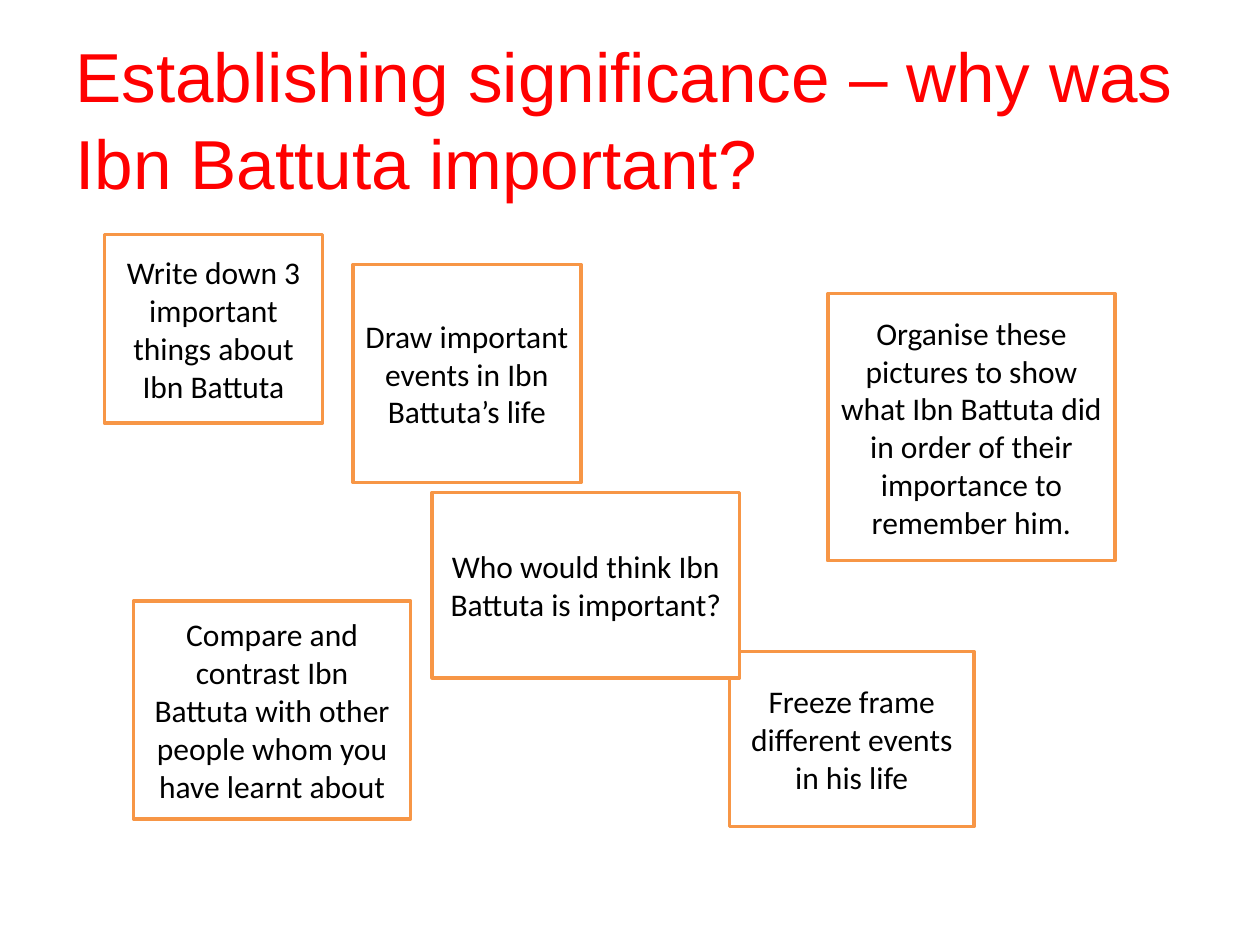
from pptx import Presentation, util as u
from pptx.dml.color import RGBColor
from pptx.enum import shapes, text

COLUMNS, ROWS = 100, 75
TASKS = [
    ("Write down 3 important things about Ibn Battuta", (8.3, 18.6, 17.3, 15)),
    ("Draw important events in Ibn Battuta’s life", (28, 21, 18.1, 17.3)),
    ("Organise these pictures to show what Ibn Battuta did in order of "
     "their importance to remember him.", (65.7, 23.3, 22.8, 21.2)),
    ("Freeze frame different events in his life", (57.9, 51.7, 19.4, 13.9)),
    ("Who would think Ibn Battuta is important?", (34.3, 39.1, 24.4, 14.7)),
    ("Compare and contrast Ibn Battuta with other people whom you have "
     "learnt about", (10.6, 47.7, 22, 17.3)),
]


def colour(value):
    """Turn a hex string into a colour."""
    return RGBColor.from_string(value)


def assign(target, values):
    """Set each named attribute on the target."""
    for name, value in values.items():
        setattr(target, name, value)


class Board:
    """Hold the style and the current slide."""

    title_style = {"font": {"name": "Arial", "size": u.Pt(39.6)}, "colour": "FF0000",
                   "paragraph": {"alignment": text.PP_ALIGN.LEFT, "line_spacing": 1.04}}
    card_style = {"font": {"name": "Calibri", "size": u.Pt(18)}, "colour": "000000",
                  "paragraph": {"alignment": text.PP_ALIGN.CENTER}}
    frame_style = {"word_wrap": True, "vertical_anchor": text.MSO_ANCHOR.MIDDLE}

    def __init__(self, deck):
        """Add a blank page to the deck."""
        self.deck = deck
        self.page = deck.slides.add_slide(deck.slide_layouts[6])

    def place(self, left, top, width, height):
        """Convert grid columns and rows into slide lengths."""
        column = self.deck.slide_width / COLUMNS
        row = self.deck.slide_height / ROWS
        return [round(n) for n in (left * column, top * row, width * column, height * row)]

    def label(self, box, words, style):
        """Put styled words into a box."""
        assign(box.text_frame, self.frame_style)
        para = box.text_frame.paragraphs[0]
        assign(para, style["paragraph"])
        span = para.add_run()
        span.text = words
        assign(span.font, style["font"])
        span.font.color.rgb = colour(style["colour"])

    def title(self, words, area):
        """Add the heading."""
        box = self.page.shapes.add_textbox(*self.place(*area))
        self.label(box, words, self.title_style)

    def card(self, words, area):
        """Add an outlined task card."""
        box = self.page.shapes.add_shape(shapes.MSO_SHAPE.RECTANGLE, *self.place(*area))
        box.shadow.inherit = False
        box.fill.solid()
        box.fill.fore_color.rgb = colour("FFFFFF")
        box.line.color.rgb = colour("F79646")
        box.line.width = u.Pt(2)
        self.label(box, words, self.card_style)


def main():
    """Build and save the slide."""
    deck = Presentation()
    assign(deck, {"slide_width": u.Inches(10), "slide_height": u.Inches(7.5)})
    board = Board(deck)
    board.title("Establishing significance – why was Ibn Battuta important?", (5, 3, 90, 12.5))
    for words, area in TASKS:
        board.card(words, area)
    deck.save("out.pptx")


if __name__ == "__main__":
    main()
